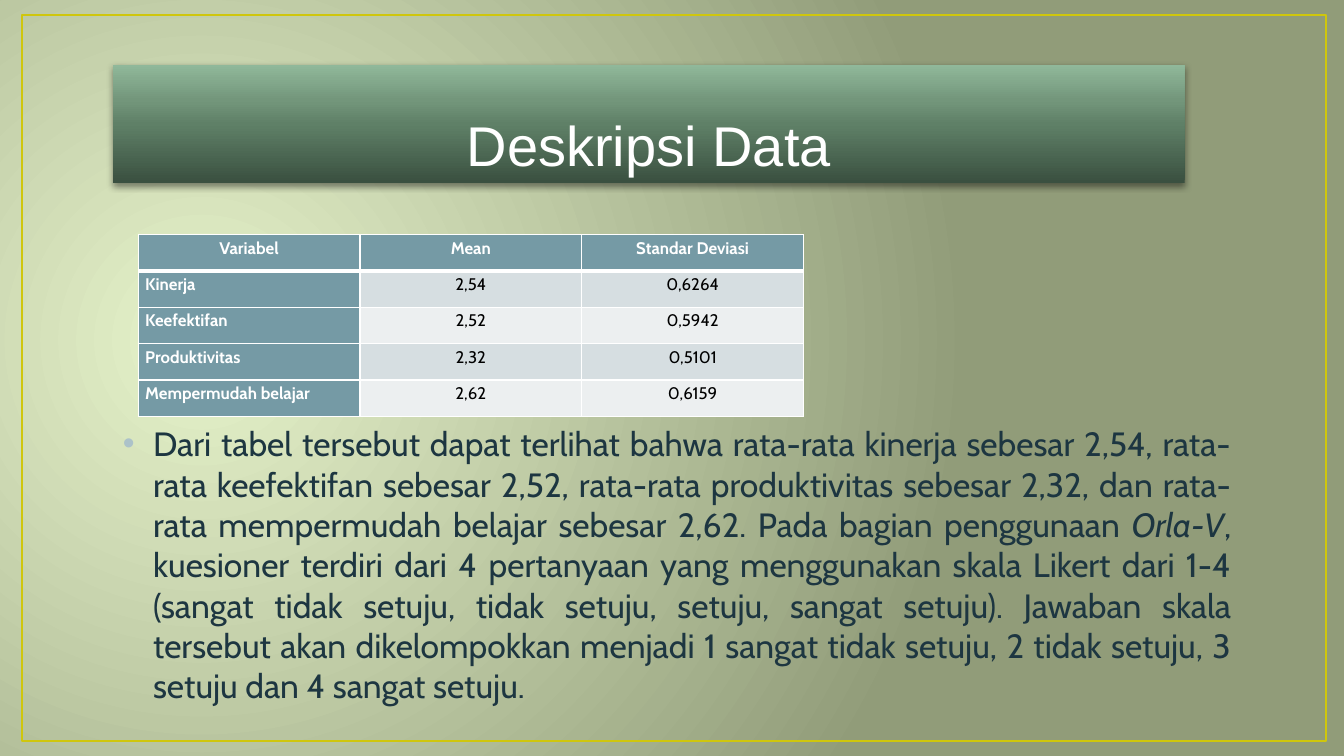
"""Build the "Deskripsi Data" slide with its table and explanation."""
from lxml import etree
from pptx import Presentation
from pptx import util as u
from pptx.dml.color import RGBColor
from pptx.enum import shapes, text
from pptx.oxml import parse_xml
from pptx.oxml.ns import nsdecls, qn

TITLE = "Deskripsi Data"
ROWS = [
    ("Variabel", "Mean", "Standar Deviasi"),
    ("Kinerja", "2,54", "0,6264"),
    ("Keefektifan", "2,52", "0,5942"),
    ("Produktivitas", "2,32", "0,5101"),
    ("Mempermudah belajar", "2,62", "0,6159"),
]
EXPLANATION = [
    ("Dari tabel tersebut dapat terlihat bahwa rata-rata kinerja sebesar 2,54, "
     "rata-rata keefektifan sebesar 2,52, rata-rata produktivitas sebesar 2,32, "
     "dan rata-rata mempermudah belajar sebesar 2,62. Pada bagian penggunaan ", False),
    ("Orla-V", True),
    (", kuesioner terdiri dari 4 pertanyaan yang menggunakan skala Likert dari 1-4 "
     "(sangat tidak setuju, tidak setuju, setuju, sangat setuju). Jawaban skala "
     "tersebut akan dikelompokkan menjadi 1 sangat tidak setuju, 2 tidak setuju, "
     "3 setuju dan 4 sangat setuju.", False),
]
BACKGROUND_STOPS = [(0, "E6F3CB"), (100, "919C79")]
BACKGROUND_SHADE = ('<a:path path="circle"><a:fillToRect l="15000" t="50000" '
                    'r="85000" b="60000"/></a:path>')
TITLE_STOPS = [(0, "3A5040"), (50, "5F8067"), (70, "73967B"), (100, "90B89A")]
TITLE_SHADE = '<a:lin ang="16200000" scaled="0"/>'

WHITE = RGBColor(0xFF, 0xFF, 0xFF)
BLACK = RGBColor(0, 0, 0)
GOLD = RGBColor(0xCF, 0xC6, 0x0D)
NAVY = RGBColor(0x1D, 0x36, 0x41)
HEADER = RGBColor(0x75, 0x9A, 0xA5)
BANDS = [RGBColor(0xEC, 0xEF, 0xF0), RGBColor(0xD6, 0xDE, 0xE1)]
BULLET = RGBColor(0xAC, 0xC2, 0xC9)

COLUMN_WIDTH, ROW_HEIGHT = 2.2, 0.36


def box(left, top, width, height):
    return [u.Inches(value) for value in (left, top, width, height)]


def set_gradient(fill, parent, stops, shade):
    fill.gradient()
    gradient = next(parent.iter(qn("a:gradFill")))
    stop_list = "".join(
        f'<a:gs pos="{position * 1000}"><a:srgbClr val="{color}"/></a:gs>'
        for position, color in stops)
    gradient.getparent().replace(gradient, parse_xml(
        f'<a:gradFill {nsdecls("a")} rotWithShape="1">'
        f'<a:gsLst>{stop_list}</a:gsLst>{shade}</a:gradFill>'))


def set_font(paragraph, name, size, color, bold=False):
    font = paragraph.font
    font.name, font.size, font.bold = name, u.Pt(size), bold
    font.color.rgb = color


def add_frame(slide):
    frame = slide.shapes.add_shape(
        shapes.MSO_SHAPE.RECTANGLE, *box(0.22, 0.15, 12.93, 7.2))
    frame.shadow.inherit = False
    frame.fill.background()
    frame.line.color.rgb = GOLD
    frame.line.width = u.Pt(1.5)


def add_title(slide):
    banner = slide.shapes.add_shape(
        shapes.MSO_SHAPE.RECTANGLE, *box(1.12, 0.645, 10.63, 1.17))
    set_gradient(banner.fill, banner.element, TITLE_STOPS, TITLE_SHADE)
    banner.line.fill.background()
    banner.shadow.inherit = False
    effects = banner.element.spPr.find(qn("a:effectLst"))
    effects.append(parse_xml(
        f'<a:outerShdw {nsdecls("a")} blurRad="{u.Pt(5)}" dist="{u.Pt(2)}" '
        'dir="5400000" rotWithShape="0"><a:srgbClr val="000000">'
        '<a:alpha val="43000"/></a:srgbClr></a:outerShdw>'))
    frame = banner.text_frame
    frame.vertical_anchor = text.MSO_ANCHOR.BOTTOM
    paragraph = frame.paragraphs[0]
    paragraph.text = TITLE
    paragraph.alignment = text.PP_ALIGN.CENTER
    set_font(paragraph, "Arial", 40, WHITE)


def add_explanation(slide):
    frame = slide.shapes.add_textbox(*box(1.12, 4.15, 11.19, 3)).text_frame
    frame.word_wrap = True
    paragraph = frame.paragraphs[0]
    paragraph.alignment = text.PP_ALIGN.JUSTIFY
    set_font(paragraph, "Cabin", 24, NAVY)
    for words, italic in EXPLANATION:
        run = paragraph.add_run()
        run.text = words
        run.font.italic = italic
    properties = paragraph._p.get_or_add_pPr()
    properties.set("marL", str(u.Inches(0.3)))
    properties.set("indent", str(u.Inches(-0.3)))
    bullet = [
        f'<a:buClr {nsdecls("a")}><a:srgbClr val="{BULLET}"/></a:buClr>',
        f'<a:buFont {nsdecls("a")} typeface="Arial"/>',
        f'<a:buChar {nsdecls("a")} char="•"/>',
    ]
    for position, markup in enumerate(bullet):
        properties.insert(position, parse_xml(markup))


def set_borders(cell, bottom_width):
    properties = cell._tc.get_or_add_tcPr()
    widths = {"lnL": 1, "lnR": 1, "lnT": 1, "lnB": bottom_width}
    for position, (side, width) in enumerate(widths.items()):
        line = etree.Element(qn(f"a:{side}"), w=str(u.Pt(width)))
        solid = etree.SubElement(line, qn("a:solidFill"))
        etree.SubElement(solid, qn("a:srgbClr"), val=str(WHITE))
        properties.insert(position, line)


def add_table(slide):
    columns = len(ROWS[0])
    table = slide.shapes.add_table(len(ROWS), columns, *box(
        1.37, 2.33, columns * COLUMN_WIDTH, len(ROWS) * ROW_HEIGHT)).table
    for r, row in enumerate(ROWS):
        for c, words in enumerate(row):
            cell = table.cell(r, c)
            heading = r == 0 or c == 0
            cell.margin_left = cell.margin_right = u.Inches(0.07)
            cell.margin_top = cell.margin_bottom = 0
            cell.fill.solid()
            cell.fill.fore_color.rgb = HEADER if heading else BANDS[r % 2]
            set_borders(cell, 3 if r == 0 else 1)
            paragraph = cell.text_frame.paragraphs[0]
            paragraph.text = words
            paragraph.line_spacing = 1.15
            paragraph.alignment = (text.PP_ALIGN.JUSTIFY if r and c == 0
                                   else text.PP_ALIGN.CENTER)
            set_font(paragraph, "Cabin", 12, WHITE if heading else BLACK, heading)


def main():
    presentation = Presentation()
    presentation.slide_width = u.Inches(13.33)
    presentation.slide_height = u.Inches(7.5)
    slide = presentation.slides.add_slide(presentation.slide_layouts[6])
    set_gradient(slide.background.fill, slide.element,
                 BACKGROUND_STOPS, BACKGROUND_SHADE)
    add_frame(slide)
    add_title(slide)
    add_explanation(slide)
    add_table(slide)
    presentation.save("out.pptx")


if __name__ == "__main__":
    main()
